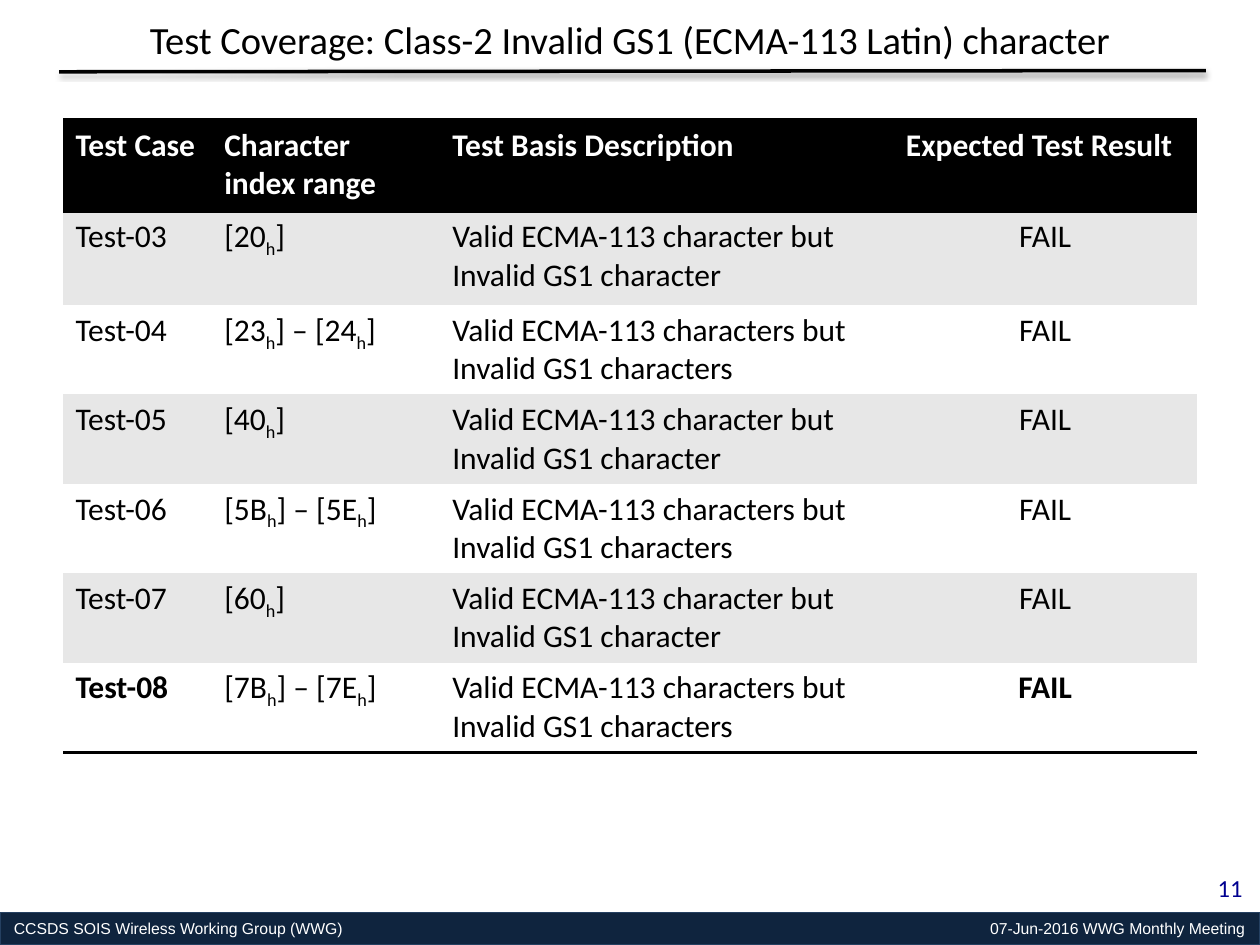
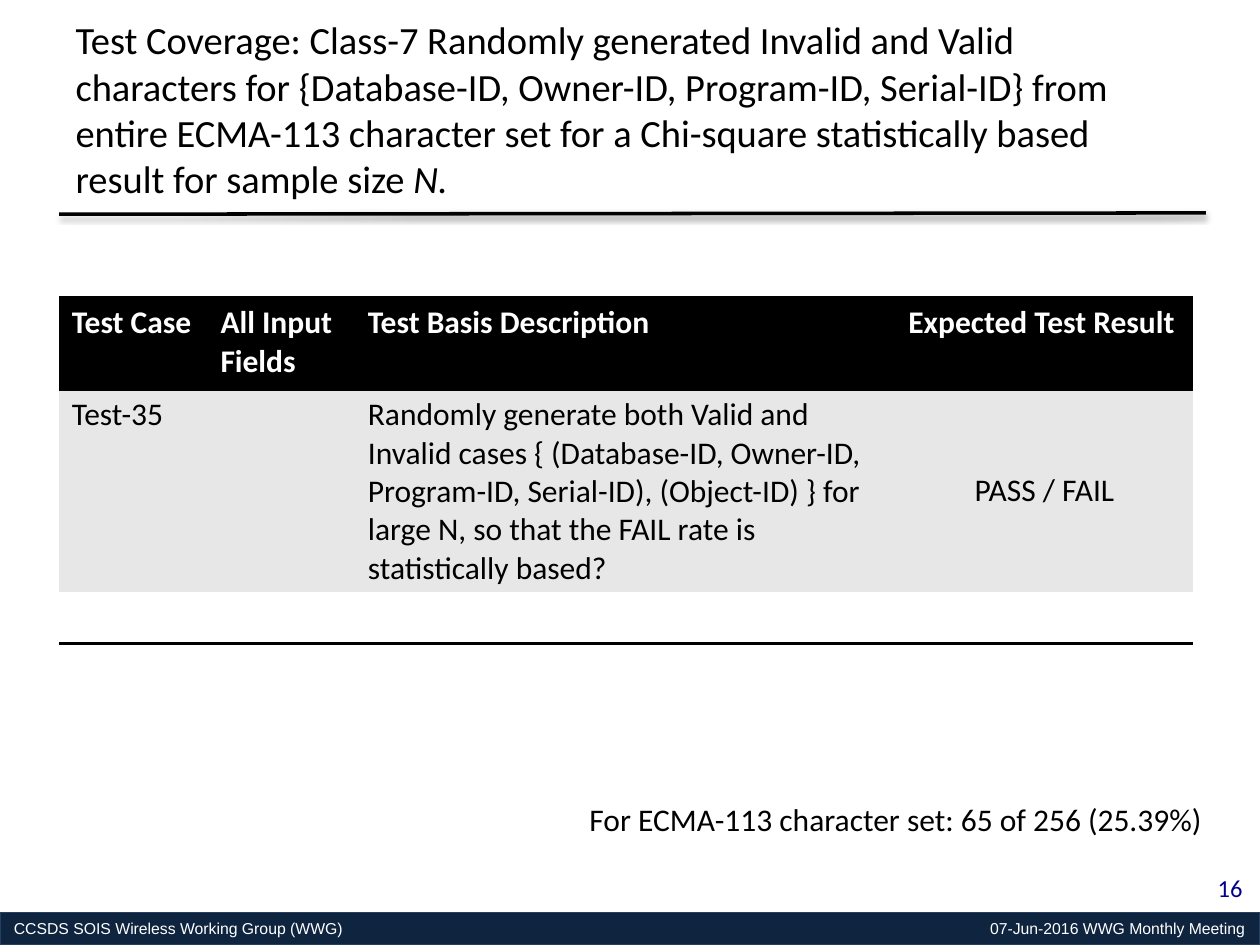
"""Build the two test coverage slides of the working group deck."""
from lxml import etree
from pptx import Presentation
from pptx import util as u
from pptx.dml.color import RGBColor
from pptx.enum import shapes, text
from pptx.oxml import ns

COLOURS = {
    "ink": "000000",
    "paper": "FFFFFF",
    "stripe": "E7E7E7",
    "band": "0F243E",
    "band_edge": "254061",
    "number": "000090",
}
PLAIN_TABLE = "{2D5ABB26-0587-4C30-8999-92F81FD0307C}"
LEFT, CENTRE, RIGHT = text.PP_ALIGN.LEFT, text.PP_ALIGN.CENTER, text.PP_ALIGN.RIGHT
TOP, MIDDLE = text.MSO_ANCHOR.TOP, text.MSO_ANCHOR.MIDDLE
RULE_WIDTH = u.Pt(2)


def colour(name):
    return RGBColor.from_string(COLOURS[name])


def inches(*lengths):
    return [u.Inches(length) for length in lengths]


def add_node(parent, tag, **attributes):
    node = etree.SubElement(parent, ns.qn(tag))
    for name, value in attributes.items():
        node.set(name, str(value))
    return node


def write(para, words, size=18, font="Calibri", ink="ink", bold=False, align=LEFT, accent=None):
    """Write words, giving the spans between bars the accent "sub" or "italic"."""
    para.alignment = align
    for index, part in enumerate(words.split("|")):
        if not part:
            continue
        span = para.add_run()
        span.text = part
        span.font.size = u.Pt(size)
        span.font.name = font
        span.font.bold = bold
        span.font.color.rgb = colour(ink)
        if index % 2 and accent == "sub":
            span.font._element.set("baseline", "-25000")
        elif index % 2 and accent == "italic":
            span.font.italic = True


def add_text(slide, place, words, wrap=True, **style):
    box = slide.shapes.add_textbox(*inches(*place))
    box.text_frame.word_wrap = wrap
    write(box.text_frame.paragraphs[0], words, **style)


def add_footer(slide, number):
    band = slide.shapes.add_shape(shapes.MSO_SHAPE.RECTANGLE, *inches(0, 7.24, 10, 0.26))
    band.shadow.inherit = False
    band.fill.solid()
    band.fill.fore_color.rgb = colour("band")
    band.line.color.rgb = colour("band_edge")
    band.line.width = u.Pt(0.75)
    frame = band.text_frame
    frame.margin_left = frame.margin_right = u.Inches(0.11)
    frame.margin_top = frame.margin_bottom = u.Inches(0.06)
    frame.vertical_anchor = MIDDLE
    para = frame.paragraphs[0]
    write(para, "CCSDS SOIS Wireless Working Group (WWG)\t07-Jun-2016 WWG Monthly Meeting",
          size=9, font="Arial", ink="paper")
    tabs = add_node(para._p.get_or_add_pPr(), "a:tabLst")
    add_node(tabs, "a:tab", pos=u.Inches(9.77), algn="r")
    add_text(slide, (9.3, 6.88, 0.66, 0.35), str(number), size=14, ink="number", align=RIGHT)


def add_title(slide, words, height, **style):
    title = slide.shapes.title
    title.left, title.top, title.width, title.height = inches(0.5, 0.08, 9, height)
    frame = title.text_frame
    frame.auto_size = text.MSO_AUTO_SIZE.NONE
    frame.word_wrap = True
    frame.vertical_anchor = TOP
    write(frame.paragraphs[0], words, size=22, **style)


def add_title_rule(slide, top):
    rule = slide.shapes.add_connector(
        shapes.MSO_CONNECTOR.STRAIGHT, *inches(0.47, top, 9.57, top - 0.01))
    rule.line.color.rgb = colour("ink")
    rule.line.width = RULE_WIDTH
    effects = add_node(rule._element.spPr, "a:effectLst")
    shadow = add_node(effects, "a:outerShdw", blurRad=u.Pt(3.1), dist=u.Pt(1.6),
                      dir=90 * 60000, rotWithShape=0)
    add_node(add_node(shadow, "a:srgbClr", val=COLOURS["ink"]), "a:alpha", val=38000)


def add_border(cell, tag):
    properties = cell._tc.get_or_add_tcPr()
    edge = add_node(properties, tag, w=RULE_WIDTH)
    add_node(add_node(edge, "a:solidFill"), "a:srgbClr", val=COLOURS["ink"])
    properties.insert(0, edge)


def add_grid(slide, place, widths, heights, rows):
    """Add a striped table with a black header and a closing rule."""
    frame = slide.shapes.add_table(
        len(rows), len(widths), *inches(*place, sum(widths), sum(heights)))
    table = frame.table
    table._tbl.tblPr.find(ns.qn("a:tableStyleId")).text = PLAIN_TABLE
    for column, width in zip(table.columns, widths):
        column.width = u.Inches(width)
    for index, (row, height, entries) in enumerate(zip(table.rows, heights, rows)):
        row.height = u.Inches(height)
        header = index == 0
        fill = "ink" if header else "stripe" if index % 2 else "paper"
        for position, (cell, entry) in enumerate(zip(row.cells, entries)):
            last_column = position == len(widths) - 1
            outer_column = position == 0 or last_column
            cell.fill.solid()
            cell.fill.fore_color.rgb = colour(fill)
            if last_column and not header:
                cell.vertical_anchor = MIDDLE if height > 1 else TOP
            write(cell.text_frame.paragraphs[0], entry, accent="sub",
                  ink="paper" if header else "ink",
                  bold=header or (index == len(rows) - 1 and outer_column),
                  align=CENTRE if last_column and not header else LEFT)
            if header:
                add_border(cell, "a:lnB")
                add_border(cell, "a:lnT")
            elif index == len(rows) - 1:
                add_border(cell, "a:lnB")


def header_row(second):
    return ["Test Case", second, "Test Basis Description", "Expected Test Result"]


def invalid_character_row(number, codes):
    plural = "s" if len(codes) > 1 else ""
    return [
        f"Test-{number:02}",
        " – ".join(f"[{code}|h|]" for code in codes),
        f"Valid ECMA-113 character{plural} but Invalid GS1 character{plural}",
        "FAIL",
    ]


def add_coverage_slide(deck, number, title, title_height, rule_top, **style):
    slide = deck.slides.add_slide(deck.slide_layouts[5])
    add_footer(slide, number)
    add_title(slide, title, title_height, **style)
    add_title_rule(slide, rule_top)
    return slide


def add_invalid_character_slide(deck):
    slide = add_coverage_slide(
        deck, 11, "Test Coverage: Class-2 Invalid GS1 (ECMA-113 Latin) character",
        0.45, 0.57, align=CENTRE)
    ranges = [["20"], ["23", "24"], ["40"], ["5B", "5E"], ["60"], ["7B", "7E"]]
    rows = [invalid_character_row(number, codes) for number, codes in enumerate(ranges, 3)]
    add_grid(slide, (0.5, 0.95), [1.18, 1.81, 3.6, 2.41], [0.73, 0.74] + [0.71] * 5,
             [header_row("Character index range")] + rows)


def add_random_sample_slide(deck):
    slide = add_coverage_slide(
        deck, 16,
        "Test Coverage: Class-7 Randomly generated Invalid and Valid characters for "
        "{Database-ID, Owner-ID, Program-ID, Serial-ID} from entire ECMA-113 character set "
        "for a Chi-square statistically based result for sample size |N.|",
        1.61, 1.7, accent="italic")
    description = (
        "Randomly generate both Valid and Invalid cases { (Database-ID, Owner-ID, "
        "Program-ID, Serial-ID), (Object-ID) } for large N, so that the FAIL rate is "
        "statistically based?")
    add_grid(slide, (0.47, 2.36), [1.18, 1.17, 4.29, 2.36], [0.73, 1.61, 0.41],
             [header_row("All Input Fields"),
              ["Test-35", "", description, "PASS / FAIL"],
              [""] * 4])
    add_text(slide, (4.58, 6.3, 5.13, 0.4),
             "For ECMA-113 character set: 65 of 256 (25.39%)", wrap=False)


def main():
    deck = Presentation()
    deck.slide_width, deck.slide_height = inches(10, 7.5)
    add_invalid_character_slide(deck)
    add_random_sample_slide(deck)
    deck.save("out.pptx")


if __name__ == "__main__":
    main()
